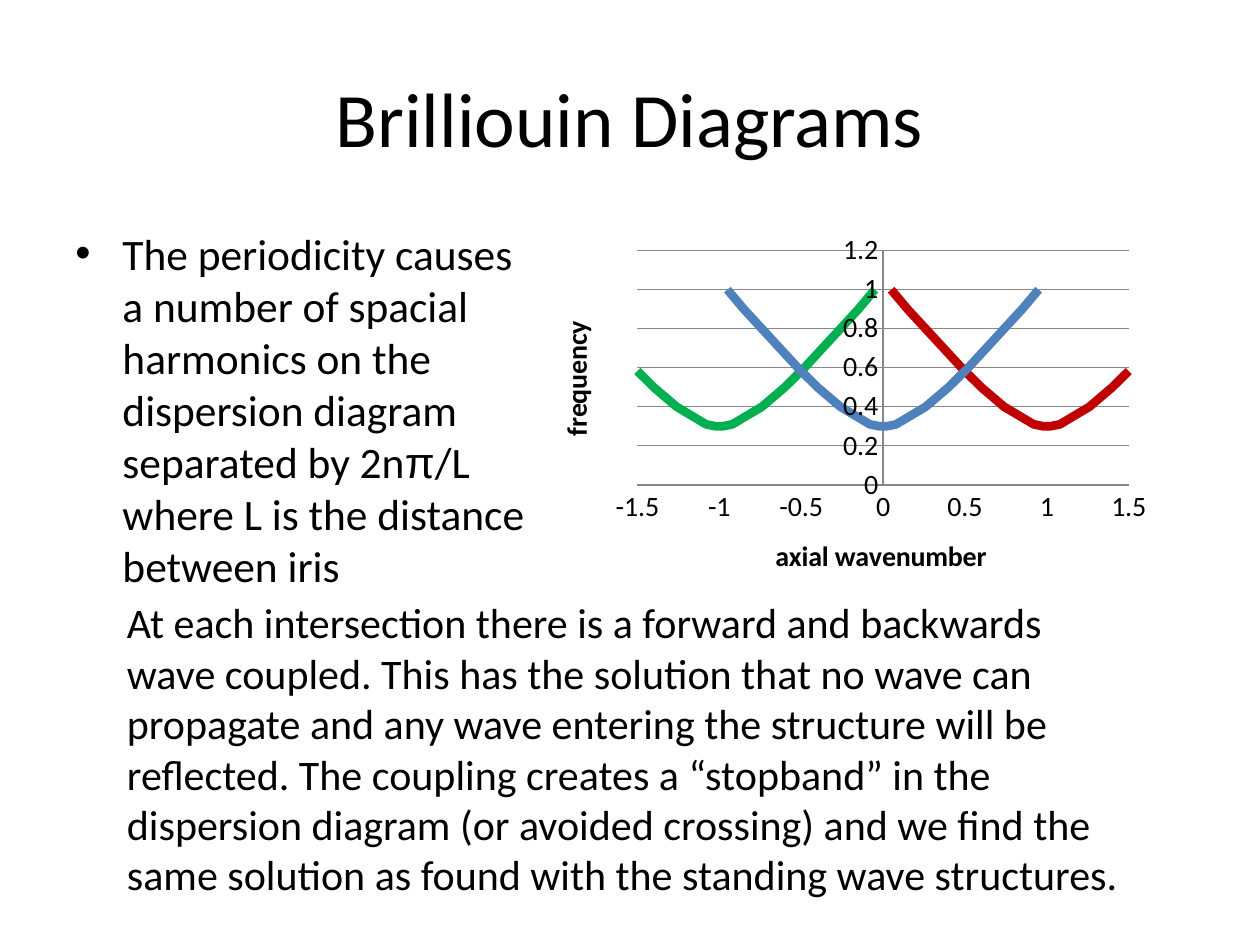
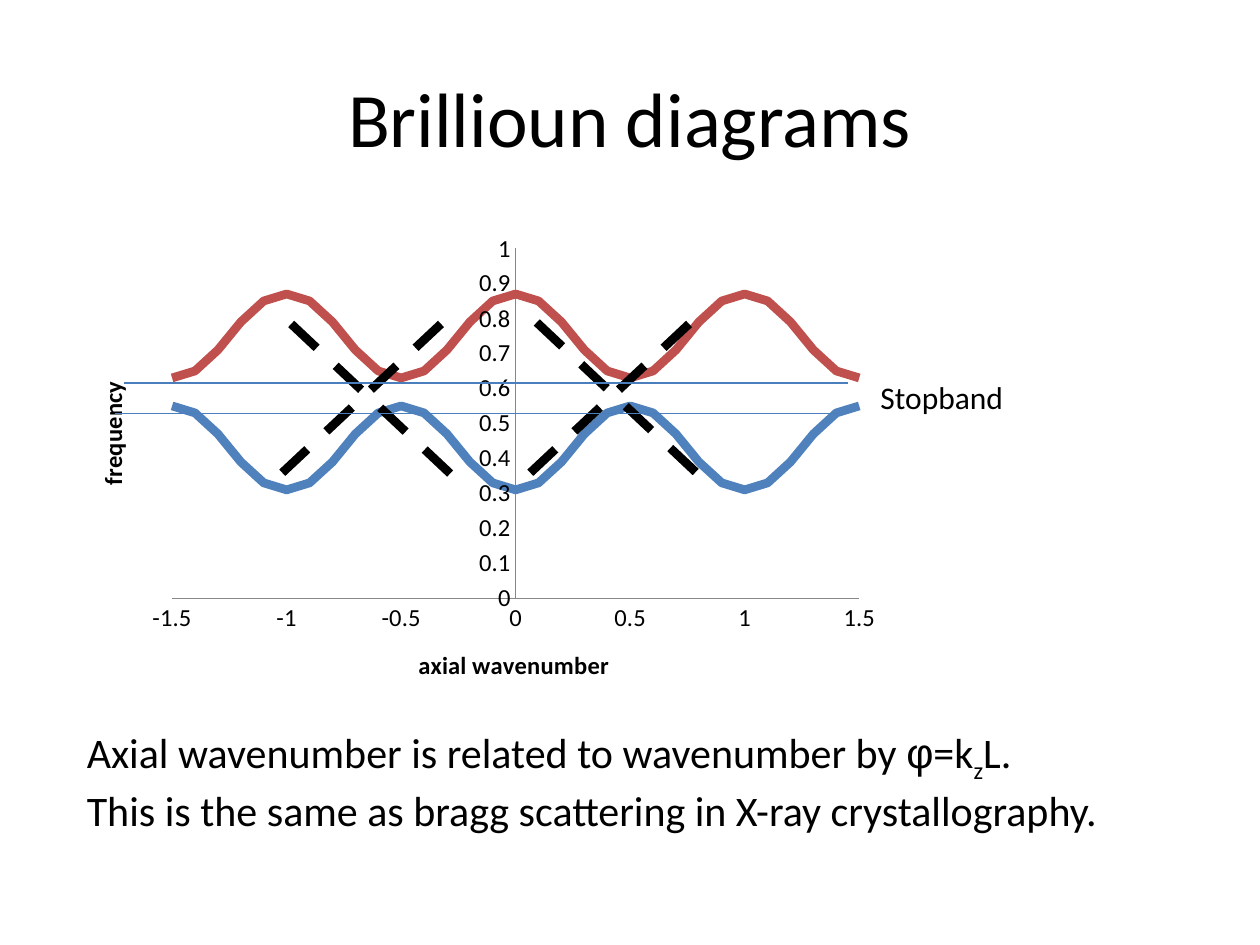
"""Build two slides on Brillouin diagrams with scatter charts and notes."""
import math

from lxml import etree
from pptx import Presentation
from pptx import util as u
from pptx.chart import data
from pptx.dml import color
from pptx.enum import chart as charts, dml, shapes, text
from pptx.oxml import ns

BLACK, GREY, BLUE, RED = "000000", "878787", "4F81BD", "C0504D"
CRIMSON, GREEN, BAND_BLUE = "C00000", "00B050", "4B7EBC"
FONT = "Calibri"
TITLE_AT = (1.27, 0.76, 22.86, 3.18)
rgb = color.RGBColor.from_string


def add_text(page, at, paragraphs, size, bullet=False, title=False):
    """Add a text box; each paragraph is a list of (words, font, baseline)."""
    box = page.shapes.add_textbox(*map(u.Cm, at))
    frame_format = {"word_wrap": True, "auto_size": text.MSO_AUTO_SIZE.NONE}
    if title:
        frame_format["vertical_anchor"] = text.MSO_ANCHOR.MIDDLE
    for name, value in frame_format.items():
        setattr(box.text_frame, name, value)
    for index, spans in enumerate(paragraphs):
        para = box.text_frame.add_paragraph() if index else box.text_frame.paragraphs[0]
        para.alignment = text.PP_ALIGN.CENTER if title else text.PP_ALIGN.LEFT
        if bullet:
            properties = para._p.get_or_add_pPr()
            properties.set("marL", str(u.Cm(0.95)))
            properties.set("indent", str(-u.Cm(0.95)))
            etree.SubElement(properties, ns.qn("a:buFont")).set("typeface", "Arial")
            etree.SubElement(properties, ns.qn("a:buChar")).set("char", "•")
        for words, font, baseline in spans:
            span = para.add_run()
            span.text = words
            for name, value in {"size": u.Pt(size), "name": font}.items():
                setattr(span.font, name, value)
            span.font.color.rgb = rgb(BLACK)
            if baseline:
                span._r.get_or_add_rPr().set("baseline", str(baseline * 1000))


def add_scatter(page, at, curves, size, top, step, grid, plot_box):
    """Add a smooth scatter chart; each curve is (points, colour)."""
    chart_data = data.XyChartData()
    for number, (points, _) in enumerate(curves, 1):
        series = chart_data.add_series(f"Series {number}")
        for x, y in points:
            series.add_data_point(x, y)
    chart = page.shapes.add_chart(
        charts.XL_CHART_TYPE.XY_SCATTER_SMOOTH_NO_MARKERS, *map(u.Cm, at), chart_data).chart
    chart.has_legend = chart.has_title = False
    for name, value in {"size": u.Pt(size), "name": FONT}.items():
        setattr(chart.font, name, value)
    chart.font.color.rgb = rgb(BLACK)
    chart.plots[0].vary_by_categories = False
    for series, (_, line_color) in zip(chart.plots[0].series, curves):
        series.smooth = True
        series.format.line.width = u.Pt(5)
        series.format.line.color.rgb = rgb(line_color)
    for axis, label, low, high, unit, lines in (
            (chart.category_axis, "axial wavenumber", -1.5, 1.5, 0.5, False),
            (chart.value_axis, "frequency", 0, top, step, grid)):
        axis_format = {
            "minimum_scale": low, "maximum_scale": high, "major_unit": unit,
            "has_major_gridlines": lines, "major_tick_mark": charts.XL_TICK_MARK.NONE,
            "minor_tick_mark": charts.XL_TICK_MARK.NONE}
        for name, value in axis_format.items():
            setattr(axis, name, value)
        axis.tick_labels.number_format = "General"
        axis.tick_labels.number_format_is_linked = False
        outlines = [axis.format.line]
        if lines:
            outlines.append(axis.major_gridlines.format.line)
        for line in outlines:
            line.width = u.Pt(0.75)
            line.color.rgb = rgb(GREY)
        frame = axis.axis_title.text_frame
        frame.text = label
        span = frame.paragraphs[0].runs[0]
        for name, value in {"size": u.Pt(size), "name": FONT, "bold": True}.items():
            setattr(span.font, name, value)
        span.font.color.rgb = rgb(BLACK)
        if label == "frequency":
            frame._txBody.bodyPr.set("rot", "-5400000")
            frame._txBody.bodyPr.set("vert", "horz")
    plot_area = chart._chartSpace.chart.plotArea
    for layout in plot_area.findall(ns.qn("c:layout")):
        plot_area.remove(layout)
    layout = etree.Element(ns.qn("c:layout"))
    manual = etree.SubElement(layout, ns.qn("c:manualLayout"))
    settings = [("layoutTarget", "inner"), ("xMode", "edge"), ("yMode", "edge")]
    for tag, value in settings + list(zip("xywh", plot_box)):
        etree.SubElement(manual, ns.qn(f"c:{tag}")).set("val", str(value))
    plot_area.insert(0, layout)


deck = Presentation()
deck.slide_width, deck.slide_height = u.Cm(25.4), u.Cm(19.05)
blank = deck.slide_layouts[6]

page = deck.slides.add_slide(blank)
add_text(page, TITLE_AT, [[("Brilliouin Diagrams", FONT, 0)]], 44, title=True)
add_text(page, (1.27, 4.45, 9.63, 7.47), [[
    ("The periodicity causes a number of spacial harmonics on the dispersion diagram "
     "separated by 2n", FONT, 0),
    ("π", "Arial", 0),
    ("/L where L is the distance between iris", FONT, 0)]], 24.8, bullet=True)

wavenumbers = [0, 0.01, 0.02, 0.08, 0.26, 0.4, 0.52, 0.63, 0.74, 0.85, 0.95]
frequencies = [0.3, 0.3, 0.3, 0.31, 0.4, 0.5, 0.6, 0.7, 0.8, 0.9, 1]
harmonics = []
for center, side, line_color in (
        (0, 1, BLUE), (1, 1, CRIMSON), (0, -1, BLUE),
        (1, -1, CRIMSON), (-1, 1, GREEN), (-1, -1, GREEN)):
    branch = [(round(center + side * k, 2), f) for k, f in zip(wavenumbers, frequencies)]
    harmonics.append((branch, line_color))
add_scatter(page, (10.69, 4.52, 12.7, 7.62), harmonics, 16, 1.2, 0.2, True,
            (0.17, 0.07, 0.78, 0.62))
add_text(page, (2.31, 11.91, 20.8, 6.4), [[
    ("At each intersection there is a forward and backwards wave coupled. This has the "
     "solution that no wave can propagate and any wave entering the structure will be "
     "reflected. The coupling creates a “stopband” in the dispersion diagram (or avoided "
     "crossing) and we find the same solution as found with the standing wave structures.",
     FONT, 0)]], 24)

page = deck.slides.add_slide(blank)
add_text(page, TITLE_AT, [[("Brillioun diagrams", FONT, 0)]], 44, title=True)
bands = []
for middle, swing, line_color in ((0.43, -0.12, BLUE), (0.75, 0.12, RED)):
    steps = [step / 10 for step in range(-15, 16)]
    wave = [(x, round(middle + swing * math.cos(2 * math.pi * x), 2)) for x in steps]
    bands.append((wave, line_color))
add_scatter(page, (1.3, 4.52, 16.69, 9.8), bands, 14, 1, 0.1, False,
            (0.13, 0.05, 0.83, 0.72))

crossings = [(5.87, 6.53, 9.27, 9.73), (10.82, 6.5, 14.22, 9.7),
             (8.89, 6.53, 5.69, 9.53), (13.89, 6.53, 10.69, 9.53)]
band_edges = [(2.49, 7.72, 17.09, 7.72), (2.31, 8.33, 16.89, 8.33)]
for ends_list, line_color, width, dash in (
        (crossings, BLACK, 5, dml.MSO_LINE.DASH), (band_edges, BAND_BLUE, 0.75, None)):
    for ends in ends_list:
        connector = page.shapes.add_connector(
            shapes.MSO_CONNECTOR.STRAIGHT, *map(u.Cm, ends))
        for name, value in {"width": u.Pt(width), "dash_style": dash}.items():
            setattr(connector.line, name, value)
        connector.line.color.rgb = rgb(line_color)
        etree.SubElement(connector._element.spPr, ns.qn("a:effectLst"))

add_text(page, (17.5, 7.49, 3.61, 1.02), [[("Stopband", FONT, 0)]], 18)
add_text(page, (1.5, 14.53, 22.4, 2.31), [
    [("Axial wavenumber is related to wavenumber by ", FONT, 0), ("φ", "Arial", 0),
     ("=k", FONT, 0), ("z", FONT, -25), ("L.", FONT, 0)],
    [("This is the same as bragg scattering in X-ray crystallography.", FONT, 0)]], 24)

deck.save("out.pptx")
